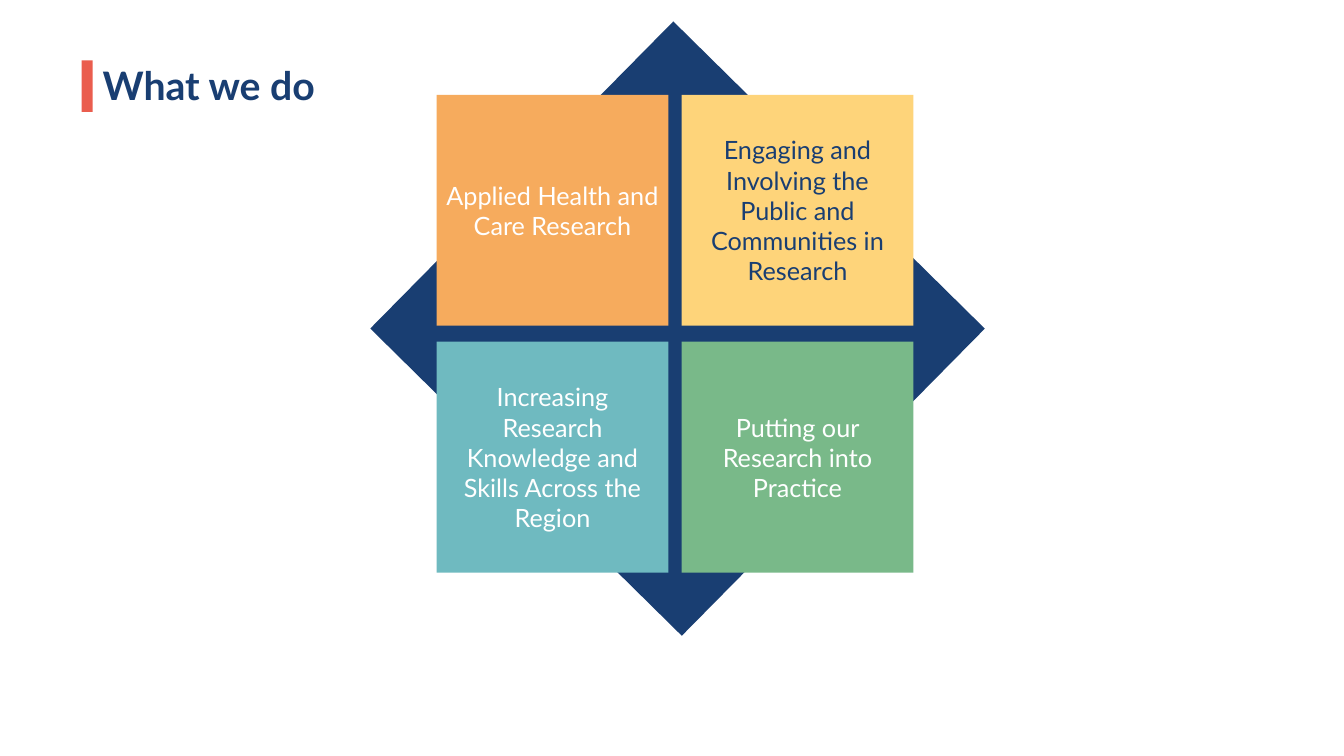
"""Build the "What we do" slide: four themes over a diamond."""
import pptx
import pptx.dml.color
import pptx.enum.shapes
import pptx.enum.text
import pptx.util

COLOURS = {
    "navy": "193E72",
    "white": "FFFFFF",
    "orange": "F6AB5D",
    "yellow": "FED47A",
    "teal": "6FBAC0",
    "green": "79B989",
    "coral": "EA5D4E",
}

THEMES = [
    ("Applied Health and Care Research", "orange", "white"),
    ("Engaging and Involving the Public and Communities in Research", "yellow", "navy"),
    ("Increasing Research Knowledge and Skills Across the Region", "teal", "white"),
    ("Putting our Research into Practice", "green", "white"),
]


class ThemeSlide:
    """Draw on one slide, measured in grid columns and rows of a tenth of an inch."""

    font = "Lato"
    cell = pptx.util.Inches(0.1)

    def __init__(self, deck):
        """Add a blank slide to the deck."""
        self.slide = deck.slides.add_slide(deck.slide_layouts[6])

    def span(self, *cells):
        """Turn grid counts into lengths."""
        return [pptx.util.Emu(round(count * self.cell)) for count in cells]

    def colour(self, name):
        """Look up a named colour."""
        return pptx.dml.color.RGBColor.from_string(COLOURS[name])

    def label(self, shape, text, size, ink, align, bold=False):
        """Put one vertically centred paragraph in a shape."""
        frame = shape.text_frame
        frame.word_wrap = True
        frame.vertical_anchor = pptx.enum.text.MSO_ANCHOR.MIDDLE
        paragraph = frame.paragraphs[0]
        paragraph.text = text
        paragraph.alignment = align
        paragraph.font.name = self.font
        paragraph.font.size = pptx.util.Pt(size)
        paragraph.font.bold = bold
        paragraph.font.color.rgb = self.colour(ink)
        return paragraph

    def block(self, column, row, columns, rows, fill, rotation=0):
        """Draw a plain filled rectangle."""
        shape = self.slide.shapes.add_shape(
            pptx.enum.shapes.MSO_SHAPE.RECTANGLE, *self.span(column, row, columns, rows))
        shape.shadow.inherit = False
        shape.fill.solid()
        shape.fill.fore_color.rgb = self.colour(fill)
        shape.line.fill.background()
        shape.rotation = rotation
        return shape

    def card(self, column, row, columns, rows, text, fill, ink):
        """Draw a rectangle with a centred label."""
        shape = self.block(column, row, columns, rows, fill)
        self.label(shape, text, 18, ink, pptx.enum.text.PP_ALIGN.CENTER)

    def title(self, column, row, columns, rows, text):
        """Add the slide heading."""
        heading = self.slide.shapes.add_textbox(*self.span(column, row, columns, rows))
        paragraph = self.label(heading, text, 28, "navy", pptx.enum.text.PP_ALIGN.LEFT, True)
        paragraph.line_spacing = 0.9


def main():
    """Build and save the deck."""
    deck = pptx.Presentation()
    deck.slide_width = pptx.util.Inches(13.33)
    deck.slide_height = pptx.util.Inches(7.5)
    page = ThemeSlide(deck)

    page.block(45.5, 11.2, 43.4, 42.8, "navy", rotation=44.6)
    page.title(9.2, 4, 115, 9.5, "What we do")
    for index, (text, fill, ink) in enumerate(THEMES):
        row, column = divmod(index, 2)
        page.card(43.3 + 24.3 * column, 9.4 + 24.5 * row, 23, 22.9, text, fill, ink)
    page.block(8.1, 6, 1.1, 5.1, "coral")

    deck.save("out.pptx")


if __name__ == "__main__":
    main()
